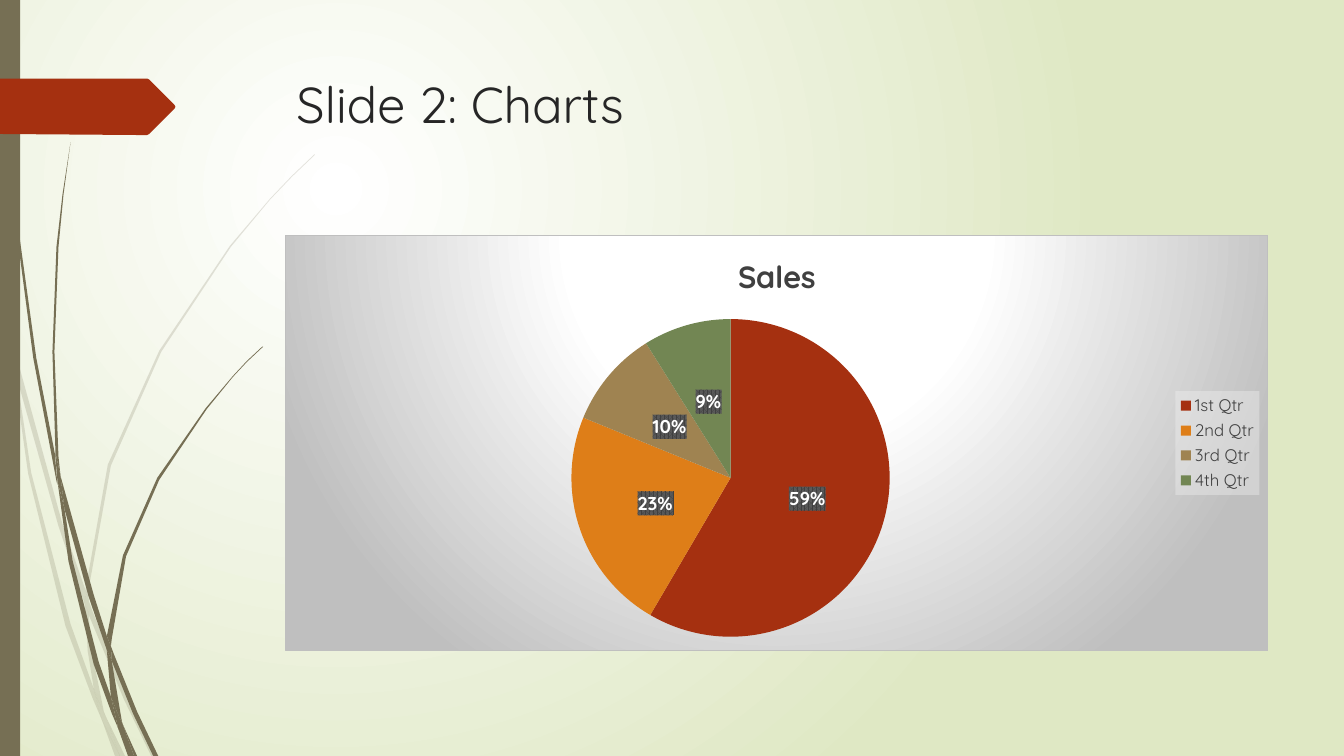
from pptx import Presentation
from pptx.chart.data import CategoryChartData
from pptx.dml.color import RGBColor
from pptx.enum.chart import XL_CHART_TYPE as ChartType
from pptx.enum.chart import XL_LABEL_POSITION as LabelPosition
from pptx.enum.chart import XL_LEGEND_POSITION as LegendPosition
from pptx.enum.shapes import MSO_SHAPE as Preset
from pptx.oxml import parse_xml
from pptx.oxml.ns import nsdecls, qn
from pptx.util import Inches, Pt

# The grid has 100 columns and 100 rows to the inch.
CELL = Inches(0.01)
COLUMNS, ROWS = 1333, 750
FONT = "Quicksand"
COLORS = {
    "white": "FFFFFF", "mist": "DFE8C4", "stem": "766F54", "title": "262626",
    "silver": "BFBFBF", "text": "404040", "hatch": "595959", "legend": "F2F2F2",
    "red": "A53010", "orange": "DE7E18", "tan": "9F8351", "green": "728653",
}
SALES = [
    ("1st Qtr", 59, "red"), ("2nd Qtr", 23, "orange"),
    ("3rd Qtr", 10, "tan"), ("4th Qtr", 9, "green"),
]

# Outlines of the grass blades, as (column, row) points.
PALE_BLADES = [
    [(11, 350), (9, 322), (0, 282), (0, 299), (10, 344)],
    [(58, 522), (84, 599), (85, 586), (62, 520), (14, 345), (17, 376)],
    [(92, 607), (88, 596), (88, 610), (123, 694), (150, 750), (155, 750), (127, 692)],
    [(119, 750), (124, 750), (105, 711)],
    [(93, 683), (70, 619), (31, 469), (17, 376), (11, 350), (28, 470), (65, 621),
     (92, 693), (101, 714), (99, 707)],
    [(84, 599), (87, 646), (93, 683), (96, 692), (105, 711), (103, 706), (91, 646),
     (88, 610), (88, 608)],
    [(88, 584), (110, 462), (160, 349), (229, 245), (268, 198), (290, 175), (312, 154),
     (312, 153), (289, 175), (268, 197), (228, 244), (158, 348), (107, 461), (85, 584),
     (85, 586), (88, 596)],
    [(101, 714), (114, 750), (119, 750)],
    [(88, 608), (88, 610), (88, 596), (85, 586), (84, 599)],
    [(96, 692), (93, 683), (99, 707), (101, 714), (119, 750), (105, 711)],
]
DARK_BLADES = [
    [(7, 110), (17, 233), (33, 355), (56, 477), (57, 481), (55, 457), (55, 453),
     (36, 355), (19, 232), (8, 109), (5, 48), (4, 0), (3, 0), (4, 48)],
    [(88, 592), (106, 645), (106, 633), (106, 631), (93, 590), (60, 472), (64, 505)],
    [(113, 649), (110, 641), (111, 656), (132, 708), (152, 750), (157, 750), (136, 706)],
    [(110, 691), (98, 657), (72, 556), (64, 505), (57, 477), (68, 557), (93, 659),
     (111, 708), (117, 722), (116, 717)],
    [(60, 472), (58, 453), (54, 349), (58, 245), (63, 193), (70, 141), (62, 193),
     (56, 245), (52, 349), (55, 449)],
    [(133, 750), (136, 750), (122, 719)],
    [(57, 477), (64, 505), (60, 472), (55, 449), (55, 453)],
    [(111, 633), (125, 552), (158, 476), (205, 406), (231, 374), (245, 359), (261, 344),
     (260, 344), (245, 358), (231, 373), (204, 405), (156, 474), (122, 551), (106, 631),
     (110, 641)],
    [(117, 722), (127, 750), (131, 750)],
    [(106, 645), (110, 691), (116, 706), (122, 719), (121, 716), (111, 656), (109, 651)],
    [(106, 645), (109, 651), (111, 656), (110, 641), (106, 631), (106, 633)],
    [(116, 706), (110, 691), (116, 717), (117, 722), (130, 750), (133, 750), (122, 719)],
]
TAG = [(173, 108), (148, 133), (146, 134), (136, 134), (0, 133), (0, 78), (136, 78),
       (146, 78), (148, 79), (173, 104), (174, 106)]


def cells(*counts):
    return [count * CELL for count in counts]


def color(name):
    return RGBColor.from_string(COLORS[name])


def style_font(font, size, name, bold=False):
    font.name, font.size, font.bold = FONT, Pt(size), bold
    font.color.rgb = color(name)


def color_xml(name, alpha=100):
    return f'<a:srgbClr val="{COLORS[name]}"><a:alpha val="{alpha * 1000}"/></a:srgbClr>'


def radial_xml(stops, focus):
    """Circular gradient; focus is its left, top, right and bottom inset in percent."""
    marks = "".join(f'<a:gs pos="{at * 1000}">{color_xml(name)}</a:gs>' for at, name in stops)
    insets = " ".join(f'{side}="{inset * 1000}"' for side, inset in zip("ltrb", focus))
    return (f'<a:gradFill {nsdecls("a")} rotWithShape="1"><a:gsLst>{marks}</a:gsLst>'
            f'<a:path path="circle"><a:fillToRect {insets}/></a:path></a:gradFill>')


def add_frame(part, fill, line="<a:noFill/>"):
    """Give a part of the chart, whose font is already set, a fill and a border."""
    frame = parse_xml(f'<c:spPr {nsdecls("c", "a")}>{fill}<a:ln w="9525">{line}</a:ln></c:spPr>')
    part.find(qn("c:txPr")).addprevious(frame)


def paint_background(page):
    fill = page.background.fill
    fill.solid()
    solid = next(page.element.iter(qn("a:solidFill")))
    gradient = radial_xml([(0, "white"), (100, "mist")], (50, 50, 100, 100))
    solid.getparent().replace(solid, parse_xml(gradient))


def paint(shape, name, alpha=100):
    shape.shadow.inherit = False
    shape.fill.solid()
    shape.fill.fore_color.rgb = color(name)
    shape.line.fill.background()
    if alpha < 100:
        tint = next(shape.element.spPr.iter(qn("a:srgbClr")))
        tint.append(parse_xml(f'<a:alpha {nsdecls("a")} val="{alpha * 1000}"/>'))


def add_outline(page, points, name, alpha=100):
    builder = page.shapes.build_freeform(*points[0], scale=float(CELL))
    builder.add_line_segments(points[1:], close=True)
    paint(builder.convert_to_shape(), name, alpha)


def add_title(page, text):
    box = page.shapes.add_textbox(*cells(284, 68, 975, 140))
    box.text_frame.word_wrap = True
    span = box.text_frame.paragraphs[0].add_run()
    span.text = text
    style_font(span.font, 36, "title")


def add_sales_pie(page):
    data = CategoryChartData()
    data.categories = [quarter for quarter, _, _ in SALES]
    data.add_series("Sales", [share for _, share, _ in SALES])
    chart = page.shapes.add_chart(ChartType.PIE, *cells(283, 233, 975, 413), data).chart
    style_font(chart.font, 10, "text")
    backdrop = radial_xml([(0, "white"), (39, "white"), (100, "silver")], (50, -80, 50, 180))
    border = f'<a:solidFill>{color_xml("silver")}</a:solidFill>'
    add_frame(chart.element, backdrop, border)

    span = chart.chart_title.text_frame.paragraphs[0].add_run()
    span.text = "Sales"
    style_font(span.font, 22, "text", bold=True)
    chart.chart_title.include_in_layout = False

    chart.has_legend = True
    legend = chart.legend
    legend.position = LegendPosition.RIGHT
    legend.include_in_layout = False
    style_font(legend.font, 12, "text")
    add_frame(legend._element, f'<a:solidFill>{color_xml("legend", 39)}</a:solidFill>')

    plot = chart.plots[0]
    plot.vary_by_categories = True
    for index, (_, _, name) in enumerate(SALES):
        fill = plot.series[0].points[index].format.fill
        fill.solid()
        fill.fore_color.rgb = color(name)

    labels = plot.series[0].data_labels
    labels.show_value = True
    labels.number_format, labels.number_format_is_linked = '0"%"', False
    labels.position = LabelPosition.CENTER
    style_font(labels.font, 13.3, "white", bold=True)
    add_frame(labels._element, f'<a:pattFill prst="pct75"><a:fgClr>{color_xml("text")}</a:fgClr>'
                               f'<a:bgClr>{color_xml("hatch")}</a:bgClr></a:pattFill>')


def main():
    deck = Presentation()
    deck.slide_width, deck.slide_height = cells(COLUMNS, ROWS)
    page = deck.slides.add_slide(deck.slide_layouts[6])
    paint_background(page)
    for blade in PALE_BLADES:
        add_outline(page, blade, "stem", alpha=20)
    for blade in DARK_BLADES:
        add_outline(page, blade, "stem")
    paint(page.shapes.add_shape(Preset.RECTANGLE, *cells(0, 0, 20, ROWS)), "stem")
    add_outline(page, TAG, "red")
    add_title(page, "Slide 2: Charts")
    add_sales_pie(page)
    deck.save("out.pptx")


if __name__ == "__main__":
    main()
